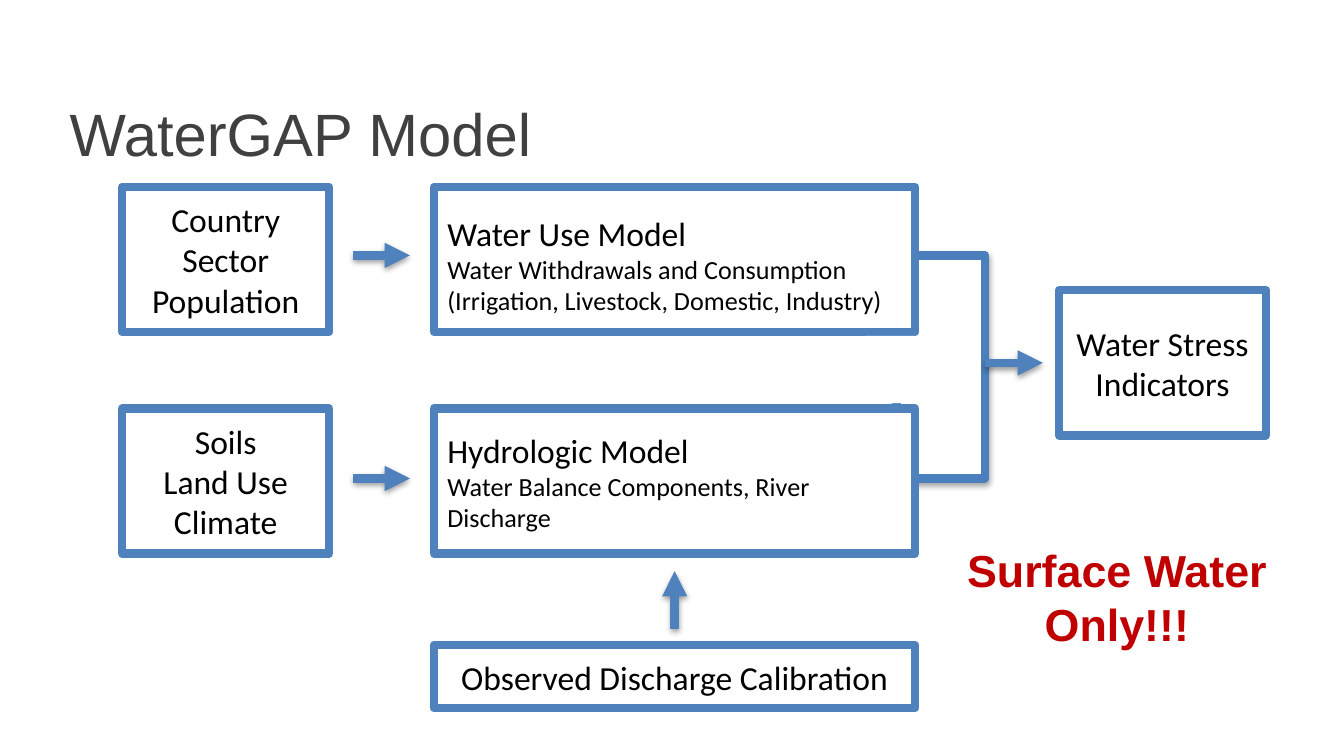
"""Build the WaterGAP model flow diagram slide."""
from dataclasses import dataclass

from lxml import etree
from pptx import Presentation
from pptx import util as u
from pptx.dml.color import RGBColor
from pptx.enum import shapes, text
from pptx.oxml import ns


@dataclass(frozen=True)
class Theme:
    heading_font: str = "Arial"
    body_font: str = "Calibri"
    blue: str = "4F81BD"
    bracket: str = "4B7EBC"
    white: str = "FFFFFF"
    black: str = "000000"
    grey: str = "404040"
    red: str = "C00000"
    title: int = 32
    callout: int = 24
    label: int = 18
    detail: int = 14
    stroke: float = 4.5


THEME = Theme()
SLIDE = (10, 10 * 9 / 16)
COLUMNS = {"input": (0.91, 1.54), "model": (3.23, 3.58), "output": (7.88, 1.54)}
ROWS = {"use": (1.39, 1.08), "stress": (2.16, 1.08), "hydro": (3.04, 1.08), "calibration": (4.8, 0.47)}
WIRES = (1.9, 3.56)
BRACKET_X = (6.67, 7.33)
MASK = (6.44, 2.5, 0.37, 0.5)
CENTER, LEFT = text.PP_ALIGN.CENTER, text.PP_ALIGN.LEFT

TITLE = "WaterGAP Model"
CALLOUT = "Surface Water Only!!!"
BOXES = [
    ("input", "use", CENTER, ["Country", "Sector", "Population"], [], 0.05),
    ("output", "stress", CENTER, ["Water Stress Indicators"], [], 0.05),
    ("model", "use", LEFT, ["Water Use Model"],
     ["Water Withdrawals and Consumption (Irrigation, Livestock, Domestic, Industry)"], 0.12),
    ("model", "hydro", LEFT, ["Hydrologic Model"], ["Water Balance Components, River Discharge"], 0.05),
    ("model", "calibration", CENTER, ["Observed Discharge Calibration"], [], 0.05),
    ("input", "hydro", CENTER, ["Soils", "Land Use", "Climate"], [], 0.05),
]


def inches(*lengths):
    return [u.Inches(length) for length in lengths]


def end(span):
    return span[0] + span[1]


def middle(span):
    return span[0] + span[1] / 2


def color(name):
    return RGBColor.from_string(name)


def write(frame, lines, align, font, ink, bold=False):
    frame.word_wrap = True
    for index, (words, size) in enumerate(lines):
        para = frame.paragraphs[0] if index == 0 else frame.add_paragraph()
        para.text, para.alignment = words, align
        para.font.name, para.font.size, para.font.bold = font, u.Pt(size), bold
        para.font.color.rgb = color(ink)


def add_box(page, place, line=None):
    box = page.shapes.add_shape(shapes.MSO_SHAPE.RECTANGLE, *inches(*place))
    box.fill.solid()
    box.fill.fore_color.rgb = color(THEME.white)
    if line:
        box.line.color.rgb = color(line)
        box.line.width = u.Pt(THEME.stroke)
    else:
        box.line.fill.background()
    box.shadow.inherit = False
    return box


def cast_shadow(shape, opacity):
    properties = shape.element.spPr
    effects = properties.find(ns.qn("a:effectLst"))
    if effects is None:
        effects = etree.SubElement(properties, ns.qn("a:effectLst"))
    shadow = etree.SubElement(effects, ns.qn("a:outerShdw"), blurRad="40000", dist="20000",
                              dir="5400000", rotWithShape="0")
    ink = etree.SubElement(shadow, ns.qn("a:srgbClr"), val=THEME.black)
    etree.SubElement(ink, ns.qn("a:alpha"), val=str(opacity * 1000))


def add_arrow(page, start, finish):
    arrow = page.shapes.add_connector(shapes.MSO_CONNECTOR.STRAIGHT, *inches(*start, *finish))
    arrow.line.color.rgb = color(THEME.blue)
    arrow.line.width = u.Pt(THEME.stroke)
    etree.SubElement(arrow.element.spPr.find(ns.qn("a:ln")), ns.qn("a:tailEnd"), type="triangle")
    cast_shadow(arrow, 38)


def add_text(page, place, words, size, align, ink, bold=False):
    box = page.shapes.add_textbox(*inches(*place))
    write(box.text_frame, [(words, size)], align, THEME.heading_font, ink, bold)
    return box


def main():
    deck = Presentation()
    deck.slide_width, deck.slide_height = inches(*SLIDE)
    page = deck.slides.add_slide(deck.slide_layouts[6])

    left, right = BRACKET_X
    top, bottom = WIRES
    bracket = add_box(page, (left, top, right - left, bottom - top), THEME.bracket)
    cast_shadow(bracket, 35)

    title = add_text(page, (0.42, 0.52, 9, 0.94), TITLE, THEME.title, LEFT, THEME.grey)
    title.text_frame.vertical_anchor = text.MSO_ANCHOR.MIDDLE

    for column, row, align, labels, details, inset in BOXES:
        (x, width), (y, height) = COLUMNS[column], ROWS[row]
        frame = add_box(page, (x, y, width, height), THEME.blue).text_frame
        frame.vertical_anchor = text.MSO_ANCHOR.MIDDLE
        frame.margin_top = u.Inches(inset)
        lines = [(words, THEME.label) for words in labels] + [(words, THEME.detail) for words in details]
        write(frame, lines, align, THEME.body_font, THEME.black)

    model = COLUMNS["model"]
    for wire in WIRES:
        add_arrow(page, (end(COLUMNS["input"]) + 0.18, wire), (model[0] - 0.18, wire))
    add_arrow(page, (middle(model), ROWS["calibration"][0] - 0.12), (middle(model), end(ROWS["hydro"]) + 0.13))
    outlet = middle(ROWS["stress"])
    add_arrow(page, (right, outlet), (COLUMNS["output"][0] - 0.12, outlet))

    add_text(page, (6.92, 3.99, 2.78, 0.91), CALLOUT, THEME.callout, CENTER, THEME.red, True)
    add_box(page, MASK)
    deck.save("out.pptx")


if __name__ == "__main__":
    main()
